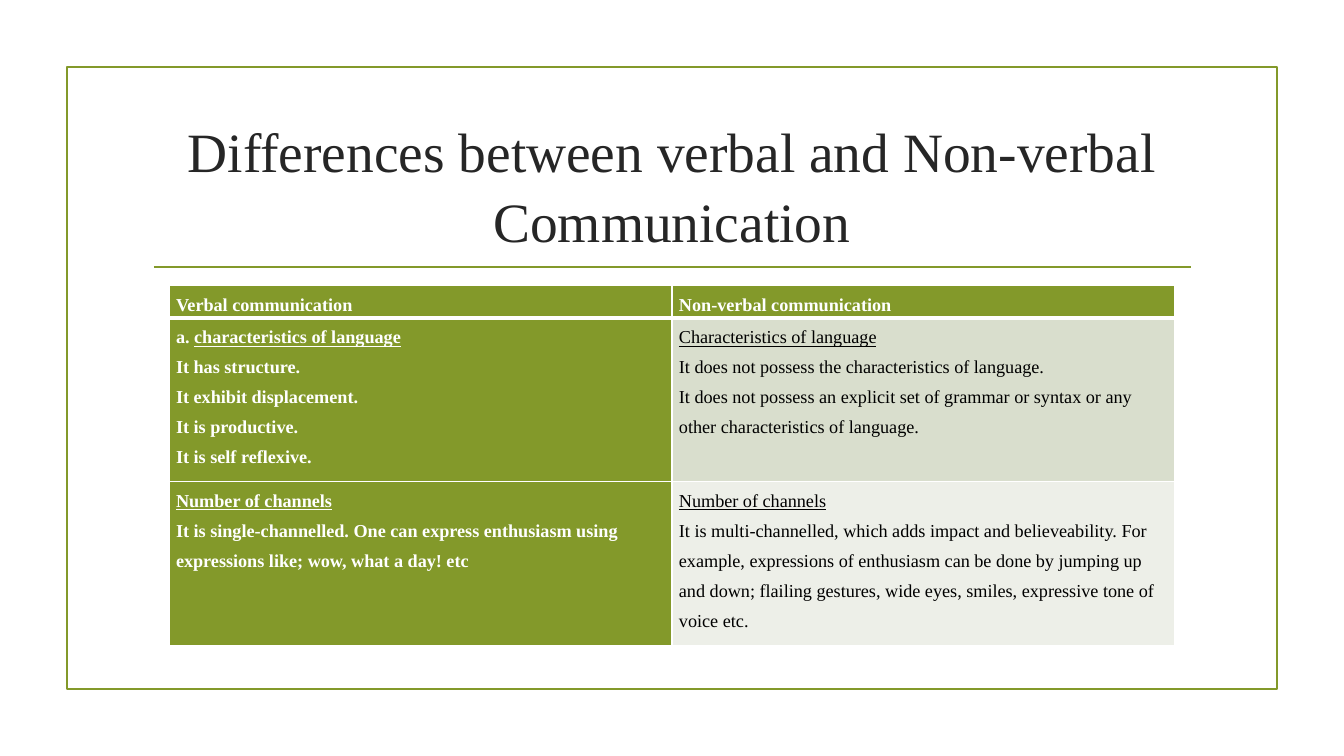
import pptx
import pptx.util
import pptx.dml.color
import pptx.enum.shapes
import pptx.enum.text
import pptx.oxml.ns
import lxml.etree
from dataclasses import dataclass

SCALE = 914400 / 100.8


def px(n):
    return round(n * SCALE)


def rgb(code):
    return pptx.dml.color.RGBColor.from_string(code)


@dataclass(frozen=True)
class Theme:
    font: str = "Times New Roman"
    green: str = "83992A"
    sage: str = "D9DECD"
    pale: str = "EDEFE8"
    white: str = "FFFFFF"
    black: str = "000000"
    ink: str = "262626"
    title: float = 39.6
    body: float = 13
    line: float = 1.25
    thin: float = 1
    thick: float = 3


def write(para, text, font, size, color, bold=False, under=False):
    run = para.add_run()
    run.text = text
    run.font.name = font
    run.font.size = pptx.util.Pt(size)
    run.font.bold = bold
    run.font.underline = under
    run.font.color.rgb = rgb(color)


def edge(cell, side, color, width):
    props = cell._tc.get_or_add_tcPr()
    line = lxml.etree.SubElement(props, pptx.oxml.ns.qn("a:ln" + side))
    line.set("w", str(pptx.util.Pt(width)))
    fill = lxml.etree.SubElement(line, pptx.oxml.ns.qn("a:solidFill"))
    tint = lxml.etree.SubElement(fill, pptx.oxml.ns.qn("a:srgbClr"))
    tint.set("val", color)


class Page:
    def __init__(self, slide, theme):
        self.shapes = slide.shapes
        self.theme = theme

    def stroke(self, item):
        item.line.color.rgb = rgb(self.theme.green)
        item.line.width = pptx.util.Pt(self.theme.line)

    def frame(self, *box):
        kind = pptx.enum.shapes.MSO_SHAPE.RECTANGLE
        shape = self.shapes.add_shape(kind, *map(px, box))
        shape.shadow.inherit = False
        shape.fill.background()
        self.stroke(shape)

    def rule(self, left, right, top):
        kind = pptx.enum.shapes.MSO_CONNECTOR.STRAIGHT
        line = self.shapes.add_connector(kind, px(left), px(top), px(right), px(top))
        self.stroke(line)
        lxml.etree.SubElement(line._element.spPr, pptx.oxml.ns.qn("a:effectLst"))

    def title(self, text, *box):
        frame = self.shapes.add_textbox(*map(px, box)).text_frame
        frame.word_wrap = True
        frame.vertical_anchor = pptx.enum.text.MSO_ANCHOR.MIDDLE
        frame.margin_top, frame.margin_bottom = px(8), 0
        para = frame.paragraphs[0]
        para.alignment = pptx.enum.text.PP_ALIGN.CENTER
        para.line_spacing = 1.04
        write(para, text, self.theme.font, self.theme.title, self.theme.ink)

    def cell(self, cell, lines, fill, row):
        look = self.theme
        head = row == 0
        dark = fill == look.green
        cell.margin_left = cell.margin_right = px(7)
        cell.margin_top = cell.margin_bottom = 0
        for side in "LRTB":
            heavy = (row, side) in ((0, "B"), (1, "T"))
            edge(cell, side, look.white, look.thick if heavy else look.thin)
        cell.fill.solid()
        cell.fill.fore_color.rgb = rgb(fill)
        style = dict(font=look.font, size=look.body, bold=dark,
                     color=look.white if dark else look.black)
        frame = cell.text_frame
        for i, text in enumerate(lines):
            para = frame.add_paragraph() if i else frame.paragraphs[0]
            para.line_spacing = 1.5
            lead, mark, rest = text.rpartition("a. ")
            if mark:
                write(para, lead + mark, **style)
            write(para, rest, under=i == 0 and not head, **style)

    def table(self, rows, left, top, wide, highs):
        count = len(rows[0])
        grid = self.shapes.add_table(len(rows), count, px(left), px(top),
                                     px(wide * count), px(sum(highs))).table
        for col in grid.columns:
            col.width = px(wide)
        fills = (self.theme.green, self.theme.sage, self.theme.pale)
        for r, (row, high) in enumerate(zip(rows, highs)):
            grid.rows[r].height = px(high)
            for c, lines in enumerate(row):
                fill = fills[r] if c else self.theme.green
                self.cell(grid.cell(r, c), lines, fill, r)


ROWS = [
    (["Verbal communication"], ["Non-verbal communication"]),
    (
        ["a. characteristics of language", "It has structure.",
         "It exhibit displacement.", "It is productive.", "It is self reflexive."],
        ["Characteristics of language",
         "It does not possess the characteristics of language.",
         "It does not possess an explicit set of grammar or syntax or any "
         "other characteristics of language."],
    ),
    (
        ["Number of channels",
         "It is single-channelled. One can express enthusiasm using "
         "expressions like; wow, what a day! etc"],
        ["Number of channels",
         "It is multi-channelled, which adds impact and believeability. For "
         "example, expressions of enthusiasm can be done by jumping up and down; "
         "flailing gestures, wide eyes, smiles, expressive tone of voice etc."],
    ),
]


def main():
    deck = pptx.Presentation()
    deck.slide_width, deck.slide_height = px(1344), px(756)
    page = Page(deck.slides.add_slide(deck.slide_layouts[6]), Theme())
    page.frame(67, 67, 1210, 622)
    page.rule(154, 1191, 267)
    page.title("Differences between verbal and Non-verbal Communication",
               143, 108, 1058, 144)
    page.table(ROWS, 169, 285, 503, (30, 150, 150))
    deck.save("out.pptx")


if __name__ == "__main__":
    main()
